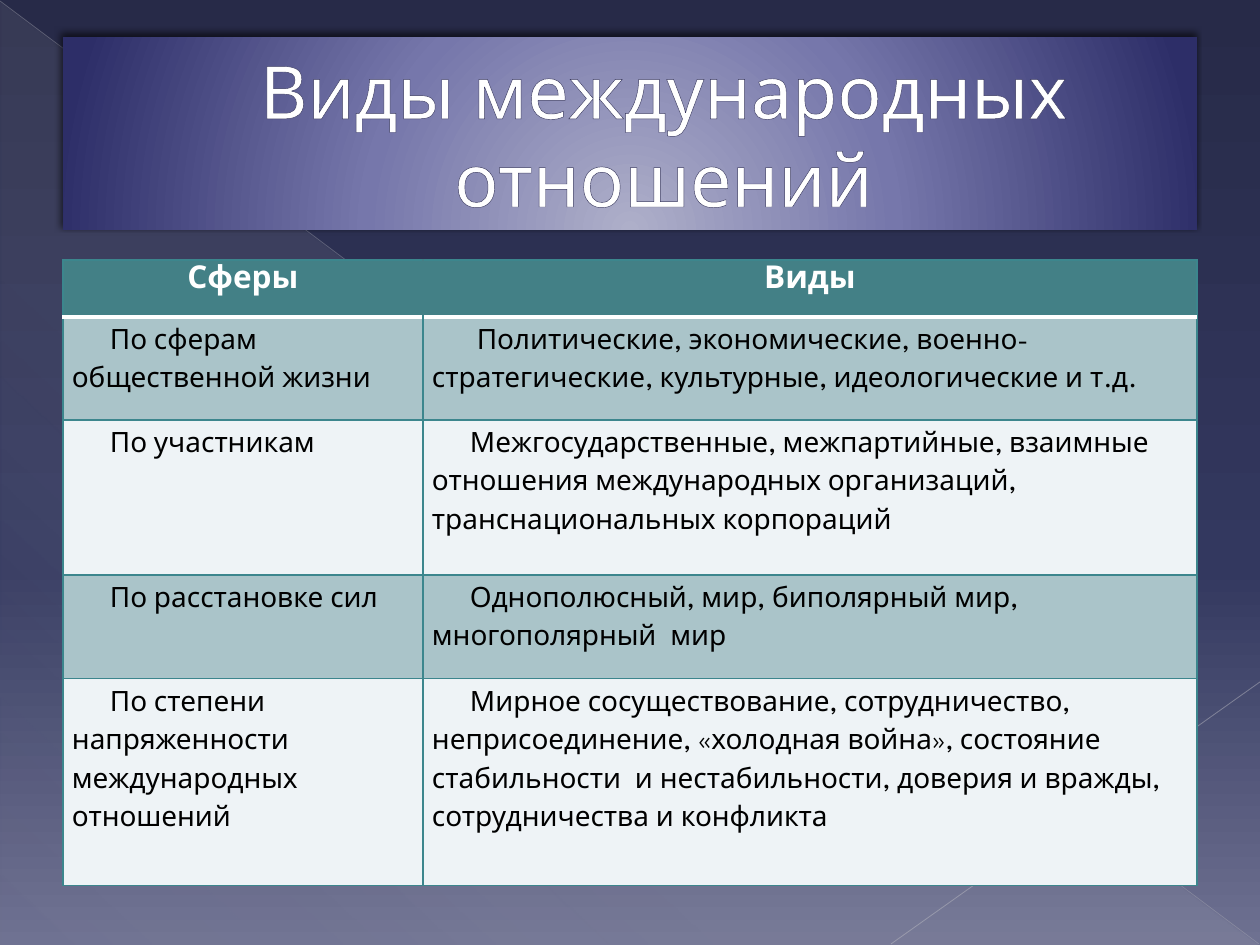
from dataclasses import dataclass

from lxml.etree import SubElement
from pptx import Presentation
from pptx.dml.color import RGBColor
from pptx.enum.shapes import MSO_CONNECTOR as Connector, MSO_SHAPE as Shape
from pptx.enum.text import MSO_ANCHOR as Anchor, MSO_AUTO_SIZE as AutoSize, PP_ALIGN as Align
from pptx.oxml import parse_xml
from pptx.oxml.ns import nsdecls, qn
from pptx.util import Pt

PX = 914400 // 126


@dataclass(frozen=True)
class Theme:
    font: str = "League Spartan"
    title_size: int = 42
    header_size: int = 18
    body_size: int = 16
    white: str = "FFFFFF"
    black: str = "000000"
    title_outline: str = "3A3A60"
    header: str = "438086"
    bands: tuple = ("AAC4C9", "EEF3F6")
    border: str = "3C868D"
    background: tuple = ((0, "272A48", 100), (60, "33385F", 100), (100, "6E7191", 100))
    banner: tuple = ((0, "AEAFC9", 100), (46, "7677AB", 100), (100, "2D2E68", 100))
    haze: tuple = ((0, "DEDEDE", 10), (70, "DEDEDE", 8), (100, "DEDEDE", 1))


LINEAR = '<a:lin ang="{}" scaled="0"/>'
GLOW_FROM_BELOW = ('<a:path path="circle"><a:fillToRect l="50000" t="155000" '
                   'r="50000" b="-55000"/></a:path>')


def color_xml(color, alpha=100):
    return f'<a:srgbClr val="{color}"><a:alpha val="{alpha * 1000}"/></a:srgbClr>'


def set_gradient(fill, parent, stops, direction):
    """Swap the solid fill inside parent for a gradient of (position, colour, alpha)."""
    fill.solid()
    stop_xml = "".join(f'<a:gs pos="{position * 1000}">{color_xml(color, alpha)}</a:gs>'
                       for position, color, alpha in stops)
    gradient = parse_xml(f'<a:gradFill {nsdecls("a")} rotWithShape="1">'
                         f'<a:gsLst>{stop_xml}</a:gsLst>{direction}</a:gradFill>')
    parent.replace(parent.find(qn("a:solidFill")), gradient)


class SlideBuilder:
    def __init__(self, presentation, theme):
        self.theme = theme
        self.slide = presentation.slides.add_slide(presentation.slide_layouts[5])

    def background(self):
        fill = self.slide.background.fill
        fill.solid()
        properties = self.slide._element.find(".//" + qn("p:bgPr"))
        set_gradient(fill, properties, self.theme.background, LINEAR.format(90 * 60000))

    def haze(self, *box):
        shape = self.slide.shapes.add_shape(Shape.RIGHT_TRIANGLE, *(v * PX for v in box))
        shape.shadow.inherit = False
        shape.line.fill.background()
        set_gradient(shape.fill, shape._element.spPr, self.theme.haze,
                     LINEAR.format(133 * 60000))

    def line(self, start, end, color, width, alpha):
        connector = self.slide.shapes.add_connector(
            Connector.STRAIGHT, *(v * PX for v in start + end))
        connector.line.color.rgb = RGBColor.from_string(color)
        connector.line.width = Pt(width)
        properties = connector._element.spPr
        SubElement(properties.find(".//" + qn("a:srgbClr")), qn("a:alpha"),
                   val=str(alpha * 1000))
        SubElement(properties, qn("a:effectLst"))

    def format_text(self, paragraph, size, color, bold=False):
        for run in paragraph.runs:
            run.font.name = self.theme.font
            run.font.size = Pt(size)
            run.font.bold = bold
            run.font.color.rgb = RGBColor.from_string(color)

    def title(self, text, *box):
        title = self.slide.shapes.title
        self.slide.shapes._spTree.append(title._element)  # in front of the decoration
        title.left, title.top, title.width, title.height = (v * PX for v in box)
        properties = title._element.spPr
        set_gradient(title.fill, properties, self.theme.banner, GLOW_FROM_BELOW)
        properties.append(parse_xml(
            f'<a:effectLst {nsdecls("a")}><a:outerShdw blurRad="{Pt(4)}" dist="{Pt(3)}" '
            f'dir="{245 * 60000}" rotWithShape="0">{color_xml(self.theme.black, 60)}'
            '</a:outerShdw></a:effectLst>'))
        frame = title.text_frame
        frame.text = text
        frame.word_wrap = True
        frame.auto_size = AutoSize.NONE
        frame.vertical_anchor = Anchor.MIDDLE
        paragraph = frame.paragraphs[0]
        paragraph.alignment = Align.CENTER
        paragraph._p.get_or_add_pPr().set("marL", str(67 * PX))
        self.format_text(paragraph, self.theme.title_size, self.theme.white)
        for run in paragraph.runs:
            run._r.get_or_add_rPr().insert(0, parse_xml(
                f'<a:ln {nsdecls("a")} w="{Pt(0.5)}"><a:solidFill>'
                f'{color_xml(self.theme.title_outline)}</a:solidFill></a:ln>'))

    def borders(self, cell, **sides):
        """Set all four borders; sides overrides (colour, width) by L, R, T or B."""
        properties = cell._tc.get_or_add_tcPr()
        for index, side in enumerate("LRTB"):
            color, width = sides.get(side, (self.theme.border, 0.75))
            properties.insert(index, parse_xml(
                f'<a:ln{side} {nsdecls("a")} w="{Pt(width)}"><a:solidFill>'
                f'{color_xml(color)}</a:solidFill></a:ln{side}>'))

    def header_cell(self, cell, first):
        paragraph = cell.text_frame.paragraphs[0]
        paragraph.alignment = Align.CENTER
        self.format_text(paragraph, self.theme.header_size, self.theme.white, bold=True)
        inner_side = "R" if first else "L"
        self.borders(cell, B=(self.theme.white, 2), **{inner_side: (self.theme.header, 0.75)})

    def body_cell(self, cell, below_header):
        cell.margin_left = cell.margin_right = 9 * PX
        cell.margin_top = cell.margin_bottom = 0
        paragraph = cell.text_frame.paragraphs[0]
        paragraph.line_spacing = 1.5
        paragraph._p.get_or_add_pPr().set("indent", str(38 * PX))
        self.format_text(paragraph, self.theme.body_size, self.theme.black)
        self.borders(cell, **({"T": (self.theme.white, 2)} if below_header else {}))

    def table(self, rows, left, top, widths, heights):
        table = self.slide.shapes.add_table(
            len(rows), len(widths), left * PX, top * PX,
            sum(widths) * PX, sum(heights) * PX).table
        for column, width in zip(table.columns, widths):
            column.width = width * PX
        for row, height in zip(table.rows, heights):
            row.height = height * PX
        for i, row in enumerate(rows):
            for j, text in enumerate(row):
                cell = table.cell(i, j)
                cell.text_frame.text = text
                color = self.theme.bands[(i - 1) % 2] if i else self.theme.header
                cell.fill.solid()
                cell.fill.fore_color.rgb = RGBColor.from_string(color)
                if i:
                    self.body_cell(cell, below_header=i == 1)
                else:
                    self.header_cell(cell, first=j == 0)


ROWS = [
    ("Сферы", "Виды"),
    ("По сферам общественной жизни",
     " Политические, экономические, военно-стратегические, культурные, "
     "идеологические и т.д."),
    ("По участникам",
     "Межгосударственные, межпартийные, взаимные отношения международных "
     "организаций, транснациональных корпораций"),
    ("По расстановке сил",
     "Однополюсный, мир, биполярный мир, многополярный  мир"),
    ("По степени напряженности международных отношений",
     "Мирное сосуществование, сотрудничество, неприсоединение, «холодная война», "
     "состояние стабильности  и нестабильности, доверия и вражды, "
     "сотрудничества и конфликта"),
]


def main():
    presentation = Presentation()
    presentation.slide_width, presentation.slide_height = 1260 * PX, 945 * PX
    builder = SlideBuilder(presentation, Theme())
    builder.background()
    builder.haze(1, 2, 1258, 943)
    builder.line((0, 1), (1259, 944), "B7B7BE", 0.39, 35)
    builder.line((1260, 682), (891, 944), "BFBFC5", 0.47, 45)
    builder.title("Виды международных отношений", 63, 37, 1134, 193)
    builder.table(ROWS, 63, 260, widths=(360, 774), heights=(57, 103, 155, 104, 207))
    presentation.save("out.pptx")


if __name__ == "__main__":
    main()
